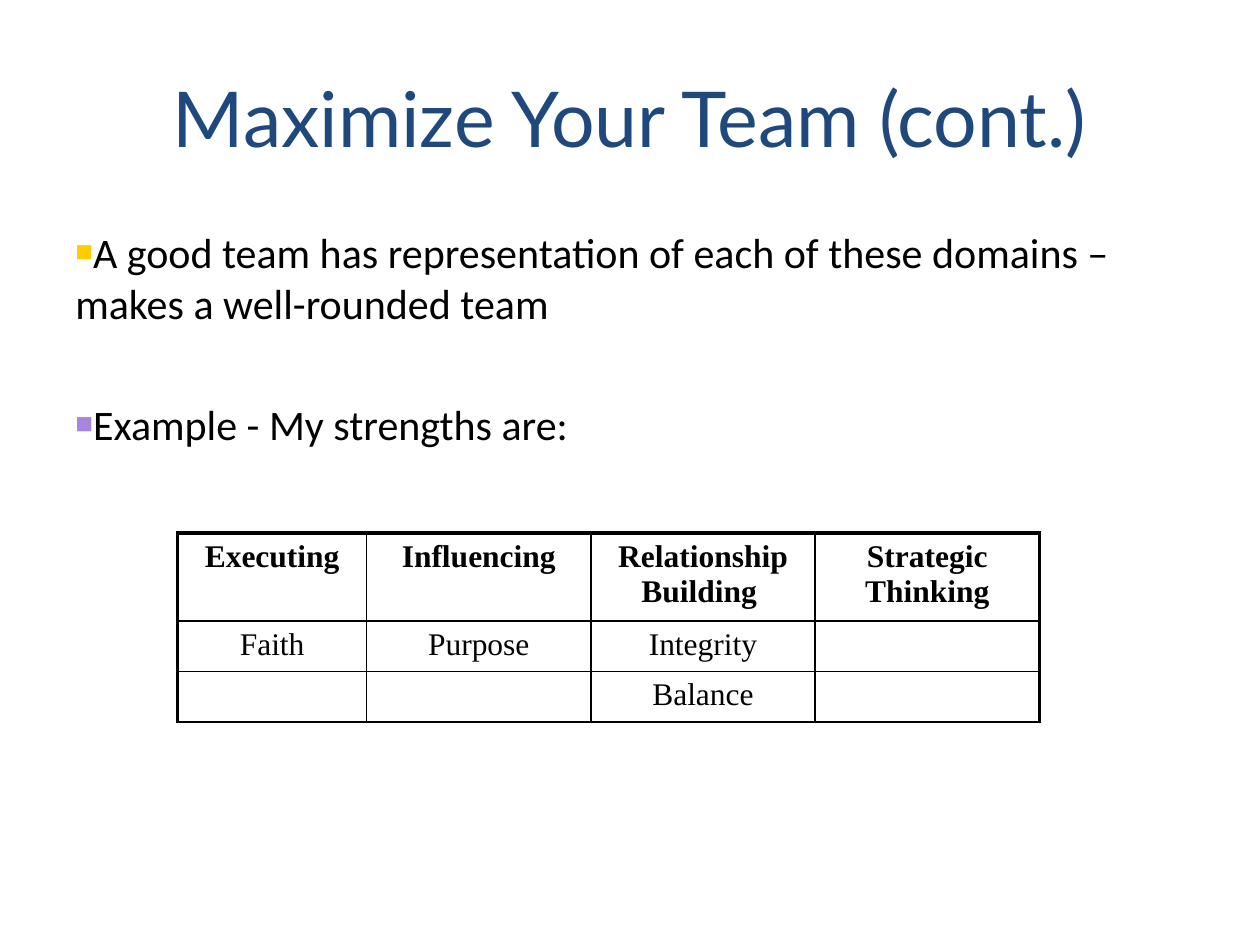
from dataclasses import dataclass

from lxml import etree
from pptx import Presentation
from pptx.dml.color import RGBColor
from pptx.enum.text import MSO_ANCHOR, PP_ALIGN
from pptx.oxml.ns import qn
from pptx.util import Inches, Pt

LEFT, CENTER = PP_ALIGN.LEFT, PP_ALIGN.CENTER
TOP, MIDDLE = MSO_ANCHOR.TOP, MSO_ANCHOR.MIDDLE
BLANK_LAYOUT = 6


@dataclass(frozen=True)
class Theme:
    navy: str = "1F497D"
    ink: str = "000000"
    gold: str = "FFCC00"
    violet: str = "A886E0"
    title_font: str = "Lato"
    body_font: str = "Calibri"
    table_font: str = "Times New Roman"
    title_size: int = 44
    body_size: int = 24
    table_size: int = 18
    outer_line: float = 2.25
    inner_line: float = 1


def write(paragraph, text, *, font, size, color, bold=False, align=LEFT, before=0):
    paragraph.alignment = align
    paragraph.space_before = Pt(before)
    run = paragraph.add_run()
    run.text = text
    run.font.name = font
    run.font.size = Pt(size)
    run.font.bold = bold
    run.font.color.rgb = RGBColor.from_string(color)


def add_node(parent, tag, **attributes):
    return etree.SubElement(parent, qn(tag), attributes)


class SlideBuilder:
    def __init__(self, presentation, theme):
        self.theme = theme
        self.width = presentation.slide_width
        self.height = presentation.slide_height
        self.slide = presentation.slides.add_slide(presentation.slide_layouts[BLANK_LAYOUT])

    def place(self, left, top, width, height):
        return (int(left * self.width), int(top * self.height),
                int(width * self.width), int(height * self.height))

    def text_frame(self, area, anchor):
        left, top, width, height = self.place(*area)
        right, bottom = left + width, top + height
        outline = self.slide.shapes.build_freeform(left, top)
        outline.add_line_segments([(right, top), (right, bottom), (left, bottom)], close=True)
        panel = outline.convert_to_shape()
        panel.shadow.inherit = False
        panel.fill.background()
        panel.line.fill.background()
        frame = panel.text_frame
        frame.word_wrap = True
        frame.vertical_anchor = anchor
        return frame

    def title(self, text, area):
        theme = self.theme
        write(self.text_frame(area, MIDDLE).paragraphs[0], text, font=theme.title_font,
              size=theme.title_size, color=theme.navy, align=CENTER)

    def bullets(self, points, area):
        theme = self.theme
        frame = self.text_frame(area, TOP)
        for index, (text, marker_color, before) in enumerate(points):
            paragraph = frame.add_paragraph() if index else frame.paragraphs[0]
            write(paragraph, text, font=theme.body_font, size=theme.body_size,
                  color=theme.ink, before=before)
            properties = paragraph._p.get_or_add_pPr()
            add_node(add_node(properties, "a:buClr"), "a:srgbClr", val=marker_color)
            add_node(properties, "a:buSzPct", val="70000")
            add_node(properties, "a:buFont", typeface=theme.table_font)
            add_node(properties, "a:buChar", char="■")

    def borders(self, cell, outer_sides):
        theme = self.theme
        properties = cell._tc.get_or_add_tcPr()
        for side in "LRTB":
            weight = theme.outer_line if side in outer_sides else theme.inner_line
            line = add_node(properties, f"a:ln{side}", w=str(int(Pt(weight))))
            add_node(add_node(line, "a:solidFill"), "a:srgbClr", val=theme.ink)

    def table(self, rows, area, column_shares, row_shares):
        theme = self.theme
        last = len(column_shares) - 1
        table = self.slide.shapes.add_table(
            len(rows), len(column_shares), *self.place(*area)).table
        table.first_row = table.horz_banding = False
        for column, share in zip(table.columns, column_shares):
            column.width = int(share * self.width)
        for row, share in zip(table.rows, row_shares):
            row.height = int(share * self.height)
        for r, texts in enumerate(rows):
            for c, text in enumerate(texts):
                cell = table.cell(r, c)
                write(cell.text_frame.paragraphs[0], text, font=theme.table_font,
                      size=theme.table_size, color=theme.ink, bold=r == 0, align=CENTER)
                outer = {"L": c == 0, "R": c == last, "T": r == 0}
                self.borders(cell, [side for side, is_outer in outer.items() if is_outer])
                cell.fill.background()


def main():
    presentation = Presentation()
    presentation.slide_width, presentation.slide_height = Inches(10), Inches(7.5)
    theme = Theme()
    builder = SlideBuilder(presentation, theme)

    builder.title("Maximize Your Team (cont.)", (0.05, 0.04, 0.9, 1 / 6))
    builder.bullets([
        ("A good team has representation of each of these domains – "
         "makes a well-rounded team", theme.gold, 7),
        ("Example - My strengths are:", theme.violet, 40.5),
    ], (0.05, 1.75 / 7.5, 9.17 / 10, 0.66))

    strengths = [
        ["Executing", "Influencing", "Relationship Building ", "Strategic Thinking"],
        ["Faith", "Purpose", "Integrity", ""],
        ["", "", "Balance", ""],
    ]
    builder.table(strengths, (1.41 / 10, 4.23 / 7.5, 6.83 / 10, 0.2),
                  [0.15] + [1.78 / 10] * 3, [0.7 / 7.5] + [0.4 / 7.5] * 2)

    presentation.save("out.pptx")


if __name__ == "__main__":
    main()
